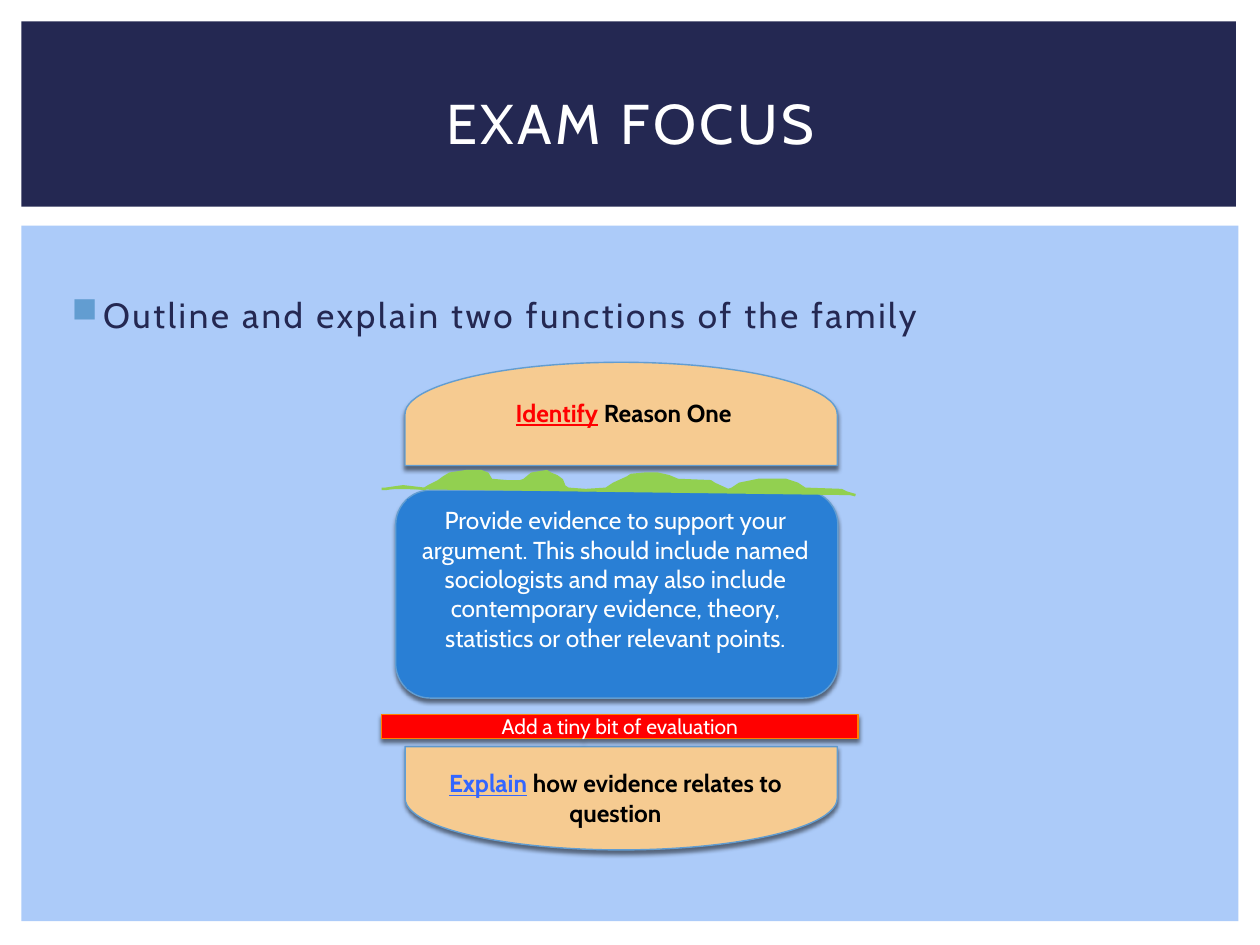
from dataclasses import dataclass

from lxml import etree
from pptx import Presentation
from pptx.dml.color import RGBColor
from pptx.enum.shapes import MSO_SHAPE
from pptx.enum.text import MSO_ANCHOR, PP_ALIGN
from pptx.oxml.ns import qn
from pptx.util import Inches, Pt

RECTANGLE = MSO_SHAPE.RECTANGLE
ROUNDED = MSO_SHAPE.ROUNDED_RECTANGLE
DELAY = MSO_SHAPE.FLOWCHART_DELAY
TOP, MIDDLE = MSO_ANCHOR.TOP, MSO_ANCHOR.MIDDLE
LEFT, CENTER = PP_ALIGN.LEFT, PP_ALIGN.CENTER


@dataclass(frozen=True)
class Theme:
    """Colours, font and type sizes of the slide."""
    font: str = "Cabin"
    navy: str = "242852"
    panel: str = "ACCBF9"
    bun: str = "F6CB91"
    outline: str = "629DD1"
    patty: str = "297FD5"
    lettuce: str = "92D050"
    red: str = "FF0000"
    orange: str = "FF8000"
    blue: str = "3366FF"
    white: str = "FFFFFF"
    black: str = "000000"
    title: int = 32
    body: int = 20
    label: int = 14
    small: int = 12


THEME = Theme()

LETTUCE_EDGE = [
    (6.79, 3.93), (6.72, 3.91), (6.68, 3.89), (6.39, 3.88), (6.33, 3.84),
    (6.24, 3.81), (6.02, 3.81), (5.87, 3.84), (5.81, 3.88), (5.78, 3.89),
    (5.67, 3.84), (5.64, 3.82), (5.38, 3.81), (5.31, 3.78), (5.22, 3.76),
    (5.12, 3.76), (5.01, 3.77), (4.98, 3.79), (4.87, 3.84), (4.81, 3.88),
    (4.65, 3.89), (4.51, 3.88), (4.48, 3.86), (4.46, 3.81), (4.42, 3.78),
    (4.37, 3.76), (4.34, 3.74), (4.22, 3.76), (4.16, 3.81), (4.13, 3.82),
    (4.02, 3.82), (3.9, 3.81), (3.87, 3.76), (3.82, 3.74), (3.7, 3.74),
    (3.57, 3.76), (3.52, 3.79), (3.48, 3.82), (3.4, 3.86), (3.37, 3.88),
    (3.2, 3.86), (3.06, 3.88), (3.03, 3.88),
]


def add_shadow(shape):
    """Give a shape a soft shadow straight below it."""
    effects = etree.SubElement(shape._element.spPr, qn("a:effectLst"))
    shadow = etree.SubElement(
        effects, qn("a:outerShdw"), blurRad=str(Pt(2.5)), dist=str(Pt(2)),
        dir="5400000", algn="ctr", rotWithShape="0")
    color = etree.SubElement(shadow, qn("a:srgbClr"), val=THEME.black)
    etree.SubElement(color, qn("a:alpha"), val="50000")


def paint(shape, fill, line=None, line_width=0.79):
    """Set fill and outline of a shape."""
    shape.fill.solid()
    shape.fill.fore_color.rgb = RGBColor.from_string(fill)
    if line:
        shape.line.color.rgb = RGBColor.from_string(line)
        shape.line.width = Pt(line_width)
    else:
        shape.line.fill.background()


def add_block(slide, kind, box, fill, line=None, rotation=0):
    """Add a preset shape; outlined ones cast a shadow."""
    shape = slide.shapes.add_shape(kind, *map(Inches, box))
    paint(shape, fill, line)
    shape.rotation = rotation
    if line:
        add_shadow(shape)
    else:
        shape.shadow.inherit = False
    return shape


def add_textbox(slide, box):
    """Add an empty text box."""
    return slide.shapes.add_textbox(*map(Inches, box))


def write(shape, runs, size, anchor=TOP, align=CENTER, spacing=0):
    """Write (text, colour, emphasis) runs as one paragraph of a shape."""
    frame = shape.text_frame
    frame.word_wrap = True
    frame.vertical_anchor = anchor
    paragraph = frame.paragraphs[0]
    paragraph.alignment = align
    for text, color, emphasis in runs:
        run = paragraph.add_run()
        run.text = text
        font = run.font
        font.name = THEME.font
        font.size = Pt(size)
        font.color.rgb = RGBColor.from_string(color)
        font.bold = "b" in emphasis
        font.underline = "u" in emphasis
        if spacing:
            run._r.get_or_add_rPr().set("spc", str(int(spacing * 100)))
    return paragraph


def add_bullet(paragraph):
    """Hang a square bullet in front of a paragraph."""
    properties = paragraph._p.get_or_add_pPr()
    properties.set("marL", str(Inches(0.3)))
    properties.set("indent", str(Inches(-0.25)))
    color = etree.SubElement(properties, qn("a:buClr"))
    etree.SubElement(color, qn("a:srgbClr"), val=THEME.outline)
    etree.SubElement(properties, qn("a:buChar"), char="■")


def add_lettuce(slide):
    """Draw the wavy lettuce leaf."""
    points = [(Inches(x), Inches(y)) for x, y in LETTUCE_EDGE]
    builder = slide.shapes.build_freeform(*points[0])
    builder.add_line_segments(points[1:], close=False)
    leaf = builder.convert_to_shape()
    paint(leaf, THEME.lettuce, THEME.lettuce, 1.5)
    leaf.shadow.inherit = False


def add_heading(slide):
    """Add the background panels, the title and the exam question."""
    add_block(slide, RECTANGLE, (0.17, 1.79, 9.66, 5.52), THEME.panel)
    add_block(slide, RECTANGLE, (0.17, 0.17, 9.64, 1.47), THEME.navy)
    question = add_textbox(slide, (0.42, 1.88, 9.19, 2.89))
    question.text_frame.margin_top = Inches(0.45)
    text = "Outline and explain two functions of the family"
    add_bullet(write(question, [(text, THEME.navy, "")], THEME.body,
                     align=LEFT, spacing=1.5))
    title = add_textbox(slide, (0.42, 0.39, 9.17, 1.15))
    write(title, [("EXAM FOCUS", THEME.white, "")], THEME.title, MIDDLE,
          spacing=2)


def add_burger(slide):
    """Add the burger whose layers are the parts of an answer."""
    for top, rotation in ((1.57, 270), (4.62, 90)):
        add_block(slide, DELAY, (4.52, top, 0.82, 3.43), THEME.bun,
                  THEME.outline, rotation)
    sauce = add_block(slide, RECTANGLE, (3.03, 5.67, 3.78, 0.19), THEME.red,
                      THEME.orange)
    write(sauce, [("Add a tiny bit of evaluation", THEME.white, "")],
          THEME.small, MIDDLE)
    labels = (
        ((3.95, 3.11, 2, 0.34), "Identify", THEME.red, " Reason One"),
        ((3.22, 6.05, 3.33, 0.57), "Explain", THEME.blue,
         " how evidence relates to question"),
    )
    for box, keyword, color, rest in labels:
        write(add_textbox(slide, box),
              [(keyword, color, "bu"), (rest, THEME.black, "b")], THEME.label)
    add_block(slide, ROUNDED, (3.14, 3.89, 3.51, 1.65), THEME.patty,
              THEME.outline)
    evidence = add_block(slide, RECTANGLE, (3.23, 3.96, 3.31, 1.51),
                         THEME.patty)
    text = ("Provide evidence to support your argument. This should include "
            "named sociologists and may also include contemporary evidence, "
            "theory, statistics or other relevant points.")
    write(evidence, [(text, THEME.white, "")], THEME.label)
    add_lettuce(slide)


def main():
    """Build and save the slide."""
    presentation = Presentation()
    presentation.slide_width = Inches(10)
    presentation.slide_height = Inches(7.5)
    slide = presentation.slides.add_slide(presentation.slide_layouts[6])
    add_heading(slide)
    add_burger(slide)
    presentation.save("out.pptx")


if __name__ == "__main__":
    main()
